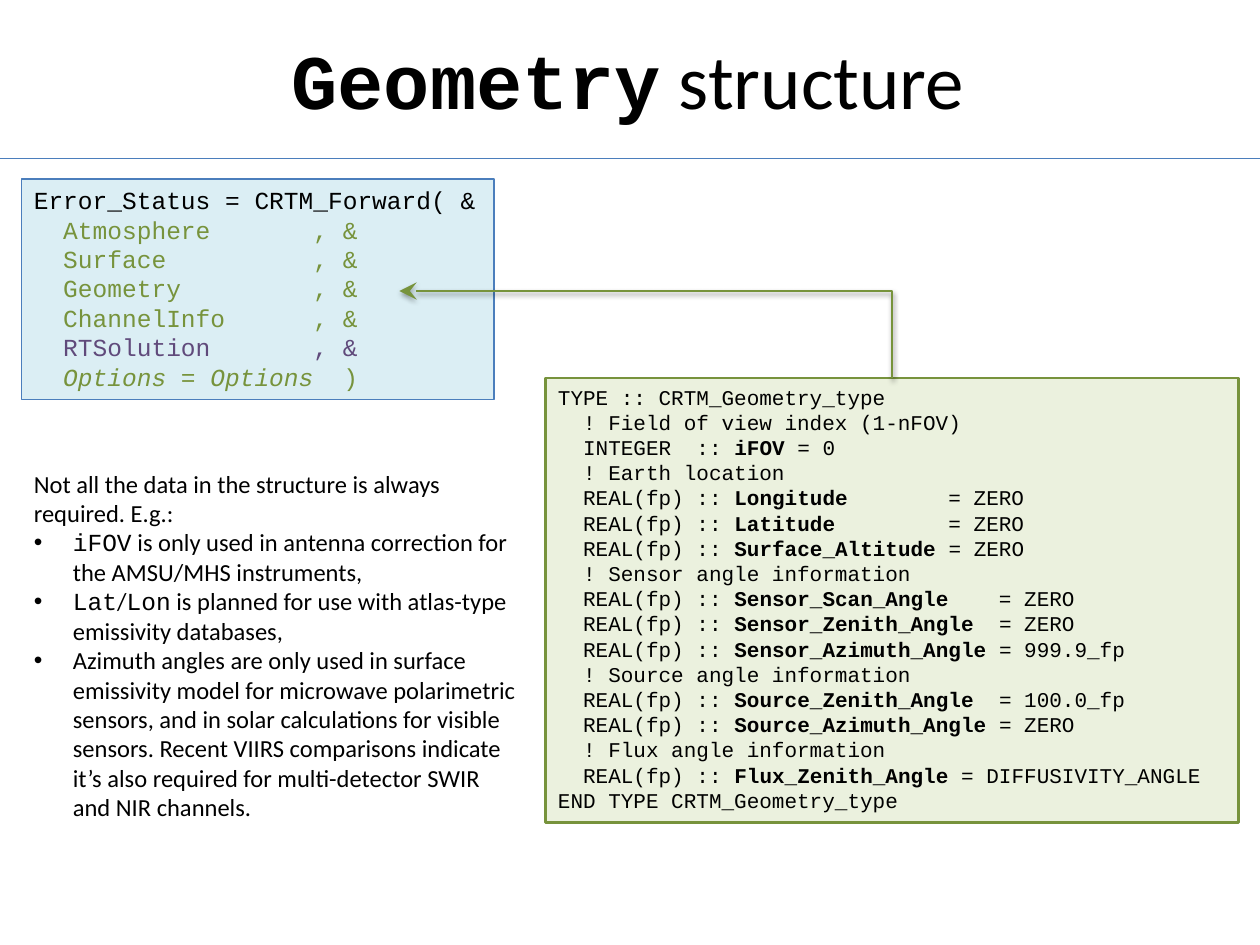
"""Build the Geometry structure slide."""
import pptx
import pptx.dml.color
import pptx.enum.dml
import pptx.enum.shapes
import pptx.enum.text
import pptx.oxml
import pptx.oxml.ns
import pptx.util

Inches = pptx.util.Inches
Pt = pptx.util.Pt
RGBColor = pptx.dml.color.RGBColor
qn = pptx.oxml.ns.qn

BLACK = RGBColor(0x00, 0x00, 0x00)
BLUE = RGBColor(0x4B, 0x7E, 0xBC)
PALE_BLUE = RGBColor(0xDB, 0xEE, 0xF4)
GREEN = RGBColor(0x77, 0x93, 0x3C)
PALE_GREEN = RGBColor(0xEB, 0xF1, 0xDE)
PURPLE = RGBColor(0x60, 0x4A, 0x7B)
SANS = "Calibri"
MONO = "Courier New"

CALL = [
    [("Error_Status = CRTM_Forward( &", {})],
    [("  Atmosphere       , &", {"color": GREEN})],
    [("  Surface          , &", {"color": GREEN})],
    [("  Geometry         , &", {"color": GREEN})],
    [("  ChannelInfo      , &", {"color": GREEN})],
    [("  RTSolution       , &", {"color": PURPLE})],
    [("  Options = Options  ", {"color": GREEN, "italic": True}), (")", {"color": GREEN})],
]

DEFINITION = [
    ("TYPE :: CRTM_Geometry_type",),
    ("  ! Field of view index (1-nFOV)",),
    ("  INTEGER  :: ", "iFOV", " = 0"),
    ("  ! Earth location",),
    ("  REAL(fp) :: ", "Longitude", "        = ZERO"),
    ("  REAL(fp) :: ", "Latitude", "         = ZERO"),
    ("  REAL(fp) :: ", "Surface_Altitude", " = ZERO"),
    ("  ! Sensor angle information",),
    ("  REAL(fp) :: ", "Sensor_Scan_Angle", "    = ZERO"),
    ("  REAL(fp) :: ", "Sensor_Zenith_Angle", "  = ZERO"),
    ("  REAL(fp) :: ", "Sensor_Azimuth_Angle", " = 999.9_fp"),
    ("  ! Source angle information",),
    ("  REAL(fp) :: ", "Source_Zenith_Angle", "  = 100.0_fp"),
    ("  REAL(fp) :: ", "Source_Azimuth_Angle", " = ZERO"),
    ("  ! Flux angle information",),
    ("  REAL(fp) :: ", "Flux_Zenith_Angle", " = DIFFUSIVITY_ANGLE"),
    ("END TYPE CRTM_Geometry_type",),
]

INTRO = "Not all the data in the structure is always required. E.g.:"
NOTES = [
    [("iFOV", {"font": MONO}),
     (" is only used in antenna correction for the AMSU/MHS instruments,", {})],
    [("Lat", {"font": MONO}), ("/", {}), ("Lon", {"font": MONO}),
     (" is planned for use with atlas-type emissivity databases,", {})],
    [("Azimuth angles are only used in surface emissivity model for microwave "
      "polarimetric sensors, and in solar calculations for visible sensors. "
      "Recent VIIRS comparisons indicate it’s also required for multi-detector "
      "SWIR and NIR channels.", {})],
]


def write(paragraph, text, size=14, font=SANS, color=BLACK, bold=False, italic=False):
    """Append a formatted run to a paragraph."""
    run = paragraph.add_run()
    run.text = text
    run.font.size = Pt(size)
    run.font.name = font
    run.font.color.rgb = color
    run.font.bold = bold
    run.font.italic = italic


class GeometrySlide:
    """Holds the slide and draws each kind of element on it."""

    def __init__(self, slide):
        self.shapes = slide.shapes

    def fill_text(self, frame, lines, bulleted=(), align=pptx.enum.text.PP_ALIGN.LEFT, **style):
        """Write lines of runs, with bullets on the given line numbers."""
        frame.word_wrap = True
        for number, runs in enumerate(lines):
            paragraph = frame.add_paragraph() if number else frame.paragraphs[0]
            paragraph.alignment = align
            if number in bulleted:
                self.bullet(paragraph)
            for text, changes in runs:
                write(paragraph, text, **{**style, **changes})

    def bullet(self, paragraph):
        """Give a paragraph a round bullet and a hanging indent."""
        properties = paragraph._p.get_or_add_pPr()
        properties.set("marL", str(Inches(0.31)))
        properties.set("indent", str(-Inches(0.31)))
        properties.append(pptx.oxml.parse_xml(
            f'<a:buFont {pptx.oxml.ns.nsdecls("a")} typeface="Arial"/>'))
        properties.append(pptx.oxml.parse_xml(
            f'<a:buChar {pptx.oxml.ns.nsdecls("a")} char="•"/>'))

    def text(self, left, top, width, height, lines,
             anchor=pptx.enum.text.MSO_ANCHOR.TOP, **style):
        """Add a text box."""
        box = self.shapes.add_textbox(Inches(left), Inches(top), Inches(width), Inches(height))
        box.text_frame.vertical_anchor = anchor
        self.fill_text(box.text_frame, lines, **style)

    def code(self, left, top, width, height, lines, fill, line, weight, size):
        """Add a filled code panel."""
        panel = self.shapes.add_shape(
            pptx.enum.shapes.MSO_SHAPE.RECTANGLE,
            Inches(left), Inches(top), Inches(width), Inches(height))
        panel.shadow.inherit = False
        panel.fill.solid()
        panel.fill.fore_color.rgb = fill
        panel.line.color.rgb = line
        panel.line.width = Pt(weight)
        frame = panel.text_frame
        frame.vertical_anchor = pptx.enum.text.MSO_ANCHOR.TOP
        frame.auto_size = pptx.enum.text.MSO_AUTO_SIZE.SHAPE_TO_FIT_TEXT
        self.fill_text(frame, lines, size=size, font=MONO)

    def line(self, start, end, color, weight, kind=pptx.enum.shapes.MSO_CONNECTOR.STRAIGHT):
        """Add a connector without shadow."""
        connector = self.shapes.add_connector(kind, *map(Inches, start + end))
        connector.line.color.rgb = color
        connector.line.width = Pt(weight)
        connector._element.spPr.append(pptx.oxml.parse_xml(
            f'<a:effectLst {pptx.oxml.ns.nsdecls("a")}/>'))
        return connector

    def elbow_arrow(self, start, end, color, weight):
        """Add a shadowed arrow that runs up from start, then left to end."""
        middle_x, middle_y = (start[0] + end[0]) / 2, (start[1] + end[1]) / 2
        half_run, half_rise = (start[0] - end[0]) / 2, (start[1] - end[1]) / 2
        arrow = self.line(
            (middle_x - half_rise, middle_y + half_run),
            (middle_x + half_rise, middle_y - half_run),
            color, weight, pptx.enum.shapes.MSO_CONNECTOR.ELBOW)
        properties = arrow._element.spPr
        properties.find(qn("a:xfrm")).set("rot", str(270 * 60000))
        properties.find(qn("a:prstGeom")).set("prst", "bentConnector2")
        names = pptx.oxml.ns.nsdecls("a")
        properties.find(qn("a:ln")).append(pptx.oxml.parse_xml(
            f'<a:tailEnd {names} type="stealth" w="lg" len="lg"/>'))
        properties.find(qn("a:effectLst")).append(pptx.oxml.parse_xml(
            f'<a:outerShdw {names} blurRad="{Pt(3.1)}" dist="{Pt(1.6)}" '
            f'dir="{90 * 60000}" rotWithShape="0"><a:srgbClr val="{BLACK}">'
            '<a:alpha val="38000"/></a:srgbClr></a:outerShdw>'))


def main():
    """Build and save the slide."""
    deck = pptx.Presentation()
    deck.slide_width, deck.slide_height = Inches(10), Inches(7.5)
    page = GeometrySlide(deck.slides.add_slide(deck.slide_layouts[6]))

    page.line((0, 1.26), (10, 1.26), BLUE, 0.75)
    title = [[("Geometry", {"font": MONO, "bold": True}), (" structure", {})]]
    page.text(1.15, 0, 7.67, 1.25, title, size=44,
              anchor=pptx.enum.text.MSO_ANCHOR.MIDDLE, align=pptx.enum.text.PP_ALIGN.CENTER)
    page.code(0.17, 1.42, 3.75, 1.75, CALL, PALE_BLUE, BLUE, 1, 14)
    definition = [[(part, {"bold": place == 1}) for place, part in enumerate(parts)]
                  for parts in DEFINITION]
    page.code(4.33, 3, 5.5, 3.53, definition, PALE_GREEN, GREEN, 1.5, 12)
    page.elbow_arrow((7.08, 3), (3.17, 2.31), GREEN, 1.5)
    page.text(0.17, 3.67, 4.08, 2.92, [[(INTRO, {})]] + NOTES, bulleted=(1, 2, 3))

    deck.save("out.pptx")


if __name__ == "__main__":
    main()
